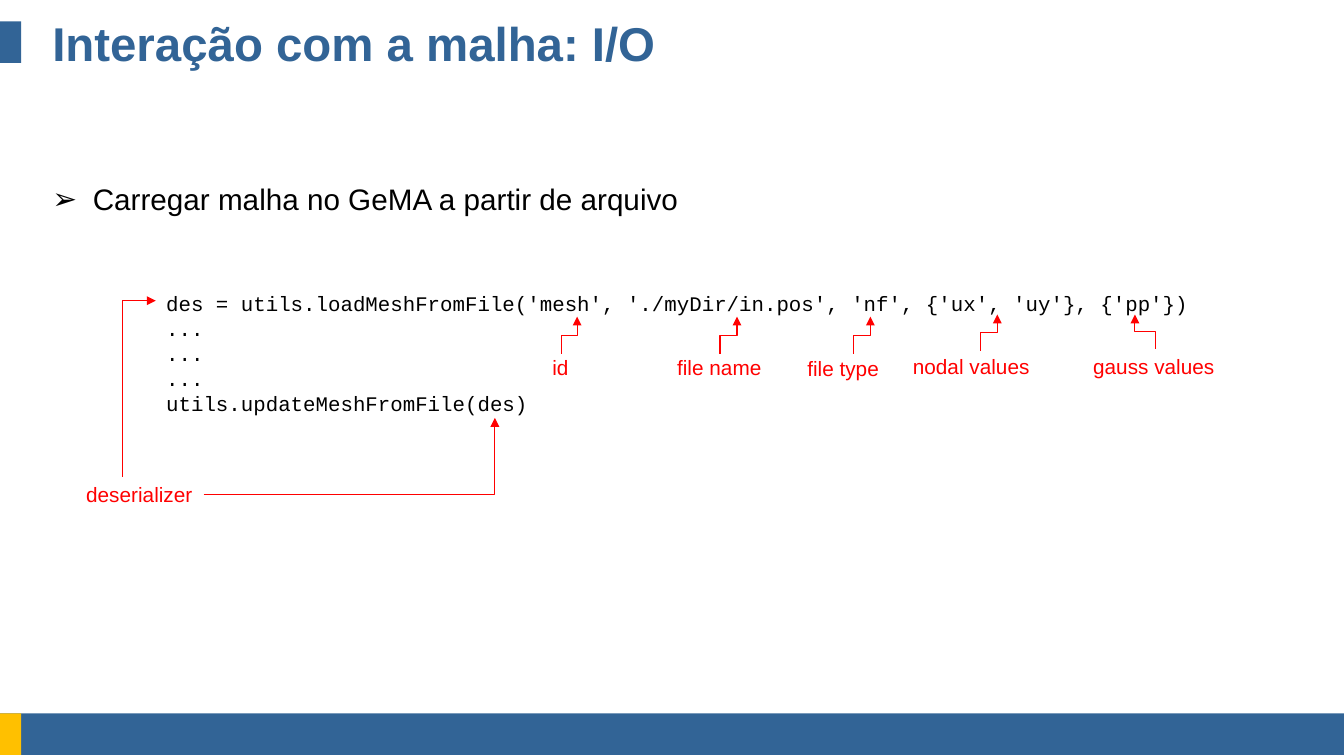
from dataclasses import dataclass

from lxml.etree import SubElement
from pptx import Presentation
from pptx.dml.color import RGBColor
from pptx.enum.shapes import MSO_CONNECTOR, MSO_SHAPE
from pptx.enum.text import MSO_ANCHOR, MSO_AUTO_SIZE, PP_ALIGN
from pptx.oxml.ns import qn
from pptx.shapes.connector import Connector
from pptx.slide import Slide
from pptx.text.text import TextFrame
from pptx.util import Inches, Pt

BLUE = RGBColor(0x32, 0x64, 0x96)
AMBER = RGBColor(0xFF, 0xC0, 0x00)
RED = RGBColor(0xFF, 0x00, 0x00)
BLACK = RGBColor(0x00, 0x00, 0x00)

SLIDE_WIDTH, SLIDE_HEIGHT = 12.6, 7.09
BAR_HEIGHT = 0.39
LABEL_HEIGHT = 0.34

CODE = """des = utils.loadMeshFromFile('mesh', './myDir/in.pos', 'nf', {'ux', 'uy'}, {'pp'})
...
...
...
utils.updateMeshFromFile(des)"""


@dataclass
class Bar:
    left: float
    top: float
    width: float
    color: RGBColor


@dataclass
class Label:
    text: str
    left: float
    top: float
    width: float


@dataclass
class Arrow:
    begin: tuple[float, float]
    end: tuple[float, float]
    starts_upward: bool = True
    bend: float = 0.5


BARS = [
    Bar(0, 6.69, SLIDE_WIDTH, BLUE),
    Bar(0, 6.69, 0.2, AMBER),
    Bar(0, 0.2, 0.2, BLUE),
]

LABELS = [
    Label("id", 5.08, 3.28, 0.35),
    Label("file name", 6.25, 3.28, 1.0),
    Label("file type", 7.47, 3.29, 0.88),
    Label("nodal values", 8.46, 3.27, 1.3),
    Label("gauss values", 10.15, 3.27, 1.34),
    Label("deserializer", 0.71, 4.47, 1.2),
]

ARROWS = [
    Arrow((5.26, 3.32), (5.41, 2.97)),
    Arrow((6.75, 3.32), (6.91, 2.97)),
    Arrow((8.0, 3.32), (8.16, 2.97)),
    Arrow((9.19, 3.29), (9.35, 2.95)),
    Arrow((10.83, 3.27), (10.64, 2.95)),
    Arrow((1.15, 4.47), (1.46, 2.82), bend=1),
    Arrow((1.91, 4.64), (4.64, 3.92), starts_upward=False, bend=1),
]


def format_text(text_frame: TextFrame, font_name: str, size: int,
                color: RGBColor, bold: bool = False) -> None:
    for paragraph in text_frame.paragraphs:
        paragraph.alignment = PP_ALIGN.LEFT
        paragraph.space_before = Pt(0)
        paragraph.font.name = font_name
        paragraph.font.size = Pt(size)
        paragraph.font.bold = bold
        paragraph.font.color.rgb = color


def add_bar(slide: Slide, bar: Bar) -> None:
    shape = slide.shapes.add_shape(
        MSO_SHAPE.RECTANGLE, Inches(bar.left), Inches(bar.top),
        Inches(bar.width), Inches(BAR_HEIGHT))
    shape.shadow.inherit = False
    shape.fill.solid()
    shape.fill.fore_color.rgb = bar.color
    shape.line.fill.background()


def fill_title(slide: Slide) -> None:
    title = slide.shapes.title
    title.left, title.top = Inches(0.39), Inches(0.2)
    title.width, title.height = Inches(11.81), Inches(BAR_HEIGHT)
    title.text_frame.text = "Interação com a malha: I/O"
    title.text_frame.auto_size = MSO_AUTO_SIZE.NONE
    title.text_frame.vertical_anchor = MSO_ANCHOR.MIDDLE
    format_text(title.text_frame, "Arial", 32, BLUE, bold=True)


def fill_body(slide: Slide) -> None:
    body = slide.placeholders[1]
    body.left, body.top = Inches(0.39), Inches(1.65)
    body.width, body.height = Inches(11.81), Inches(4.06)
    body.text_frame.text = "Carregar malha no GeMA a partir de arquivo"
    body.text_frame.auto_size = MSO_AUTO_SIZE.NONE
    properties = body.text_frame.paragraphs[0]._p.get_or_add_pPr()
    properties.set("marL", str(Inches(0.38)))
    properties.set("indent", str(Inches(-0.38)))
    SubElement(properties, qn("a:buChar"), char="➢")
    format_text(body.text_frame, "Arial", 20, BLACK)


def add_text(slide: Slide, text: str, left: float, top: float, width: float,
             height: float, wrap: bool) -> TextFrame:
    text_box = slide.shapes.add_textbox(
        Inches(left), Inches(top), Inches(width), Inches(height))
    text_frame = text_box.text_frame
    text_frame.text = text
    text_frame.word_wrap = wrap
    text_frame.auto_size = MSO_AUTO_SIZE.SHAPE_TO_FIT_TEXT
    return text_frame


def add_elbow(slide: Slide, arrow: Arrow) -> Connector:
    """Add an elbow; one that starts upward is a sideways elbow turned a quarter."""
    (begin_x, begin_y), (end_x, end_y) = arrow.begin, arrow.end
    turn = 1 if end_x > begin_x else -1
    if arrow.starts_upward:
        center_x, center_y = (begin_x + end_x) / 2, (begin_y + end_y) / 2
        half_rise = turn * (begin_y - end_y) / 2
        half_run = abs(end_x - begin_x) / 2
        begin_x, end_x = center_x + half_rise, center_x - half_rise
        begin_y, end_y = center_y + half_run, center_y - half_run
    connector = slide.shapes.add_connector(
        MSO_CONNECTOR.ELBOW, Inches(begin_x), Inches(begin_y),
        Inches(end_x), Inches(end_y))
    if arrow.starts_upward:
        quarter_turn = 90 if turn > 0 else 270
        connector._element.spPr.find(qn("a:xfrm")).set("rot", str(quarter_turn * 60000))
    return connector


def add_arrow(slide: Slide, arrow: Arrow) -> None:
    connector = add_elbow(slide, arrow)
    connector.line.color.rgb = RED
    connector.line.width = Pt(0.75)
    properties = connector._element.spPr
    adjustments = properties.find(qn("a:prstGeom")).find(qn("a:avLst"))
    SubElement(adjustments, qn("a:gd"), name="adj1",
               fmla=f"val {int(arrow.bend * 100000)}")
    SubElement(properties.find(qn("a:ln")), qn("a:tailEnd"), type="triangle")
    SubElement(properties, qn("a:effectLst"))


def main() -> None:
    presentation = Presentation()
    presentation.slide_width = Inches(SLIDE_WIDTH)
    presentation.slide_height = Inches(SLIDE_HEIGHT)
    slide = presentation.slides.add_slide(presentation.slide_layouts[1])

    for bar in BARS:
        add_bar(slide, bar)
    fill_title(slide)
    fill_body(slide)
    code = add_text(slide, CODE, 1.46, 2.68, 10.24, 1.28, wrap=True)
    format_text(code, "Courier New", 14, BLACK)
    for label in LABELS:
        text_frame = add_text(slide, label.text, label.left, label.top,
                              label.width, LABEL_HEIGHT, wrap=False)
        format_text(text_frame, "Arial", 14, RED)
    for arrow in ARROWS:
        add_arrow(slide, arrow)

    presentation.save("out.pptx")


if __name__ == "__main__":
    main()
